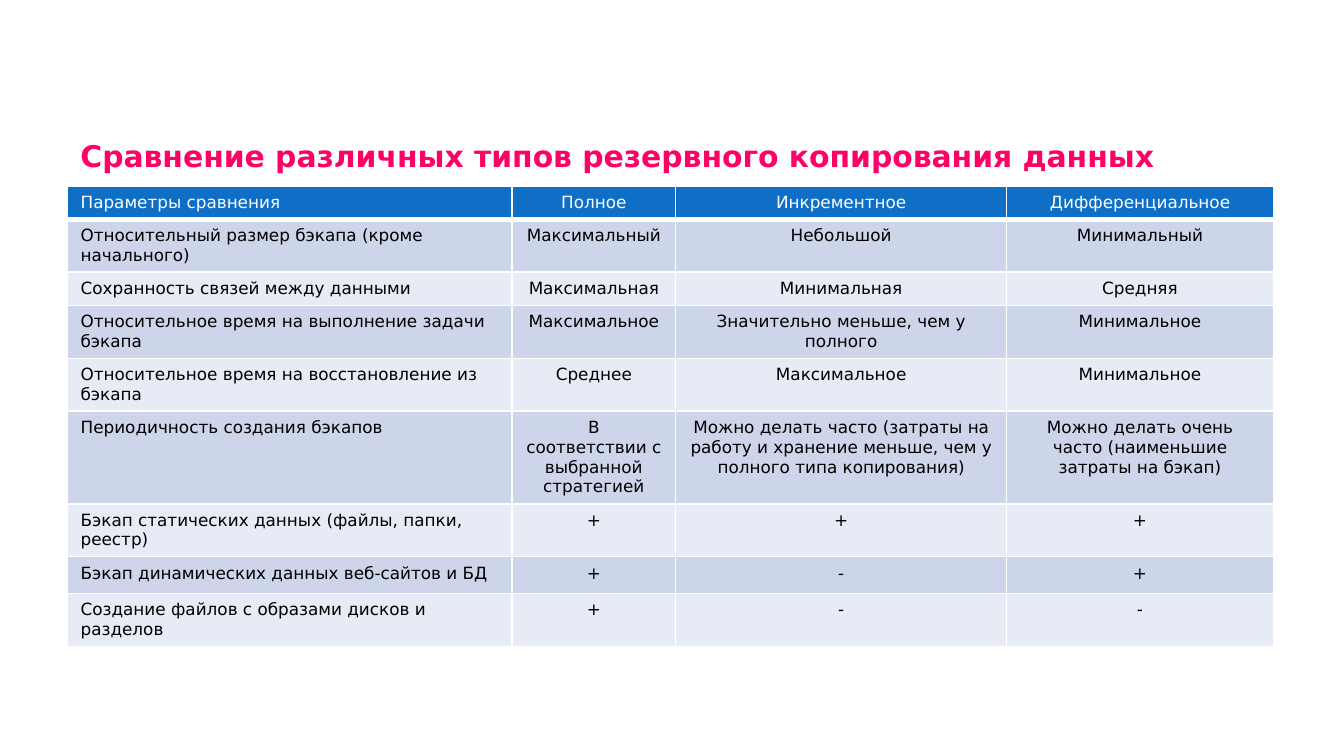
from lxml import etree
from pptx import Presentation
from pptx.dml.color import RGBColor
from pptx.enum.text import MSO_ANCHOR, PP_ALIGN
from pptx.oxml.ns import qn
from pptx.util import Pt

LEFT, CENTER, MIDDLE = PP_ALIGN.LEFT, PP_ALIGN.CENTER, MSO_ANCHOR.MIDDLE
FONT = "DejaVu Sans"
WHITE, BLACK, PINK, BLUE = "FFFFFF", "000000", "FF0066", "0F6FC6"
BANDS = ("E7EBF5", "CCD5EA")

TITLE = "Сравнение различных типов резервного копирования данных"
ROWS = [
    ("Параметры сравнения", "Полное", "Инкрементное", "Дифференциальное"),
    ("Относительный размер бэкапа (кроме начального)",
     "Максимальный", "Небольшой", "Минимальный"),
    ("Сохранность связей между данными",
     "Максимальная", "Минимальная", "Средняя"),
    ("Относительное время на выполнение задачи бэкапа",
     "Максимальное", "Значительно меньше, чем у полного", "Минимальное"),
    ("Относительное время на восстановление из бэкапа",
     "Среднее", "Максимальное", "Минимальное"),
    ("Периодичность создания бэкапов",
     "В соответствии с выбранной стратегией",
     "Можно делать часто (затраты на работу и хранение меньше, "
     "чем у полного типа копирования)",
     "Можно делать очень часто (наименьшие затраты на бэкап)"),
    ("Бэкап статических данных (файлы, папки, реестр)", "+", "+", "+"),
    ("Бэкап динамических данных веб-сайтов и БД", "+", "-", "+"),
    ("Создание файлов с образами дисков и разделов", "+", "-", "-"),
]
COL_WIDTHS = (238.2, 87.8, 177.2, 143)
ONE_LINE, TWO_LINES, THREE_LINES = 17.7, 28.4, 39
ROW_HEIGHTS = (ONE_LINE, TWO_LINES, ONE_LINE, TWO_LINES, TWO_LINES,
               THREE_LINES, TWO_LINES, 19.8, TWO_LINES)
X, TABLE_Y, TITLE_Y, TITLE_H = 36, 99.6, 59, 49


def rgb(color):
    return RGBColor.from_string(color)


def add_text(tf, text, size, color, align=LEFT, bold=False):
    p = tf.paragraphs[0]
    p.alignment = align
    r = p.add_run()
    r.text = text
    r.font.name, r.font.size, r.font.bold = FONT, Pt(size), bold
    r.font.color.rgb = rgb(color)


def set_borders(cell, top, bottom):
    """Draw white cell borders; top and bottom are widths in points."""
    tc_pr = cell._tc.get_or_add_tcPr()
    sides = (("L", 1), ("R", 1), ("T", top), ("B", bottom))
    for i, (side, width) in enumerate(sides):
        ln = etree.Element(qn(f"a:ln{side}"), w=str(Pt(width)))
        fill = etree.SubElement(ln, qn("a:solidFill"))
        etree.SubElement(fill, qn("a:srgbClr"), val=WHITE)
        tc_pr.insert(i, ln)


prs = Presentation()
prs.slide_width, prs.slide_height = Pt(720), Pt(405)
s = prs.slides.add_slide(prs.slide_layouts[6])
width = sum(COL_WIDTHS)

table = s.shapes.add_table(len(ROWS), len(COL_WIDTHS), Pt(X), Pt(TABLE_Y),
                           Pt(width), Pt(sum(ROW_HEIGHTS))).table
for column, w in zip(table.columns, COL_WIDTHS):
    column.width = Pt(w)
for row, h in zip(table.rows, ROW_HEIGHTS):
    row.height = Pt(h)

for i, texts in enumerate(ROWS):
    header = i == 0
    for j, text in enumerate(texts):
        cell = table.cell(i, j)
        cell.fill.solid()
        cell.fill.fore_color.rgb = rgb(BLUE if header else BANDS[i % 2])
        set_borders(cell, top=3 if i == 1 else 1, bottom=3 if header else 1)
        add_text(cell.text_frame, text, 9, WHITE if header else BLACK,
                 CENTER if j else LEFT)

title = s.shapes.add_textbox(Pt(X), Pt(TITLE_Y), Pt(width), Pt(TITLE_H))
tf = title.text_frame
tf.word_wrap = True
tf.vertical_anchor = MIDDLE
add_text(tf, TITLE, 16, PINK, bold=True)

prs.save("out.pptx")
